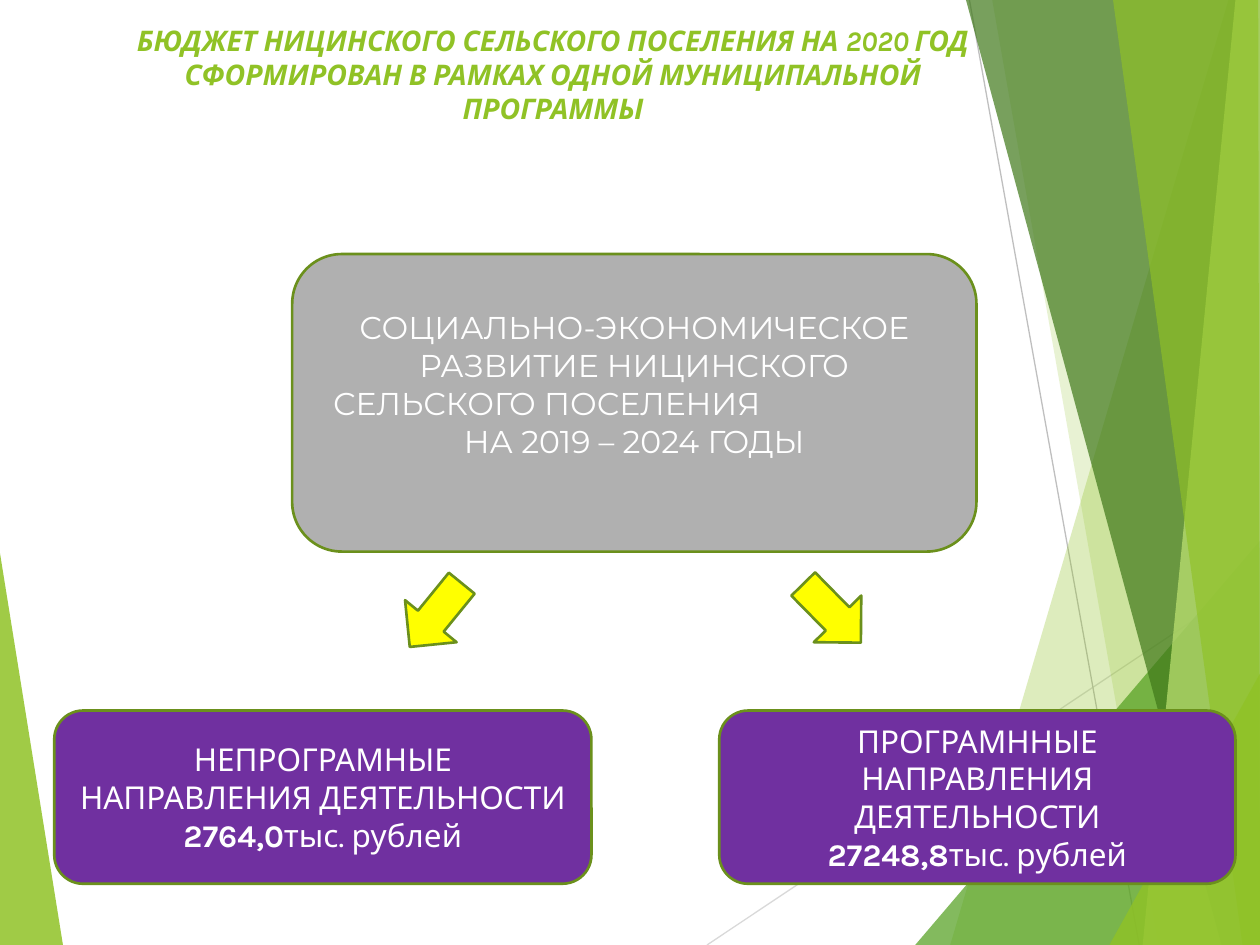
from dataclasses import dataclass

from lxml.etree import SubElement
from pptx import Presentation
from pptx.dml.color import RGBColor
from pptx.enum.shapes import MSO_CONNECTOR as Connector, MSO_SHAPE as Shape
from pptx.enum.text import MSO_ANCHOR as Anchor, PP_ALIGN as Align
from pptx.oxml.ns import qn
from pptx.util import Pt


@dataclass(frozen=True)
class Theme:
    lime: str = "90C226"
    green: str = "54A021"
    forest: str = "3F7819"
    pale_lime: str = "C0E474"
    outline: str = "6B901C"
    light_rule: str = "D9D9D9"
    dark_rule: str = "BFBFBF"
    programme: str = "B0B0B0"
    direction: str = "7030A0"
    arrow: str = "FFFF00"
    white: str = "FFFFFF"
    title_size: float = 16.2
    body_size: float = 18
    text_face: str = "Karla"
    programme_face: str = "Montserrat"
    border: float = 1.5
    rule: float = 0.75


class BudgetSlide:
    def __init__(self, slide, theme):
        self.shapes = slide.shapes
        self.theme = theme

    def facet(self, corners, color, opacity):
        """Draw a translucent polygon of the background; opacity is in percent."""
        start, *others = [(Pt(x), Pt(y)) for x, y in corners]
        builder = self.shapes.build_freeform(*start)
        builder.add_line_segments(others)
        polygon = builder.convert_to_shape()
        polygon.shadow.inherit = False
        polygon.line.fill.background()
        polygon.fill.solid()
        polygon.fill.fore_color.rgb = RGBColor.from_string(color)
        tint = polygon.fill._xPr.find(".//" + qn("a:srgbClr"))
        SubElement(tint, qn("a:alpha"), val=str(opacity * 1000))

    def rule(self, x1, y1, x2, y2, color):
        line = self.shapes.add_connector(
            Connector.STRAIGHT, Pt(x1), Pt(y1), Pt(x2), Pt(y2))
        line.line.color.rgb = RGBColor.from_string(color)
        line.line.width = Pt(self.theme.rule)
        SubElement(line._element.spPr, qn("a:effectLst"))

    def title(self, left, top, width, height, wording):
        frame = self.shapes.add_textbox(
            Pt(left), Pt(top), Pt(width), Pt(height)).text_frame
        frame.word_wrap = True
        paragraph = frame.paragraphs[0]
        paragraph.add_run().text = wording
        self._style(paragraph, self.theme.text_face, self.theme.lime,
                    self.theme.title_size)
        paragraph.font.bold = paragraph.font.italic = True

    def box(self, left, top, width, height, fill, face, lines):
        """Add a rounded box; each line is a list of (wording, bold) runs."""
        panel = self._outlined(
            Shape.ROUNDED_RECTANGLE, left, top, width, height, fill)
        frame = panel.text_frame
        frame.word_wrap = True
        frame.vertical_anchor = Anchor.MIDDLE
        for index, runs in enumerate(lines):
            paragraph = frame.add_paragraph() if index else frame.paragraphs[0]
            for wording, bold in runs:
                run = paragraph.add_run()
                run.text = wording
                if bold:
                    run.font.bold = True
            self._style(paragraph, face, self.theme.white, self.theme.body_size)
        return frame

    def arrow(self, left, top, rotation):
        pointer = self._outlined(
            Shape.DOWN_ARROW, left, top, 38, 47, self.theme.arrow)
        pointer.rotation = rotation

    def _outlined(self, kind, left, top, width, height, fill):
        shape = self.shapes.add_shape(
            kind, Pt(left), Pt(top), Pt(width), Pt(height))
        shape.shadow.inherit = False
        shape.fill.solid()
        shape.fill.fore_color.rgb = RGBColor.from_string(fill)
        shape.line.color.rgb = RGBColor.from_string(self.theme.outline)
        shape.line.width = Pt(self.theme.border)
        return shape

    def _style(self, paragraph, face, color, size):
        paragraph.alignment = Align.CENTER
        paragraph.font.name = face
        paragraph.font.size = Pt(size)
        paragraph.font.color.rgb = RGBColor.from_string(color)


def draw_background(page, theme):
    page.facet([(0, 316), (36, 540), (0, 540)], theme.lime, 85)
    page.rule(404, 540, 720, 329, theme.light_rule)
    page.rule(554, 0, 651, 540, theme.dark_rule)
    right_facets = [
        ([(702, 0), (543, 540), (720, 540), (720, 0)], theme.lime, 30),
        ([(567, 0), (662, 540), (720, 540), (720, 0)], theme.lime, 20),
        ([(523, 540), (720, 309), (720, 540)], theme.green, 72),
        ([(552, 0), (698, 540), (720, 540), (720, 0)], theme.forest, 70),
        ([(706, 0), (653, 540), (720, 540), (720, 0)], theme.pale_lime, 70),
        ([(636, 0), (710, 540), (720, 540), (719, 0)], theme.lime, 65),
        ([(634, 540), (720, 385), (720, 540)], theme.lime, 80),
    ]
    for corners, color, opacity in right_facets:
        page.facet(corners, color, opacity)


def draw_programme(page, theme):
    frame = page.box(167, 145.2, 391, 170, theme.programme, theme.programme_face, [
        [("СОЦИАЛЬНО-ЭКОНОМИЧЕСКОЕ РАЗВИТИЕ НИЦИНСКОГО", False)],
        [("СЕЛЬСКОГО ПОСЕЛЕНИЯ", False)],
        [("НА 2019 – 2024 ГОДЫ", False)],
    ])
    frame.margin_bottom = Pt(25)
    settlement = frame.paragraphs[1]
    settlement.alignment = Align.LEFT
    settlement._p.get_or_add_pPr().set("marL", str(Pt(8)))


def draw_directions(page, theme):
    directions = [
        (31, 307, "НЕПРОГРАМНЫЕ НАПРАВЛЕНИЯ ДЕЯТЕЛЬНОСТИ", "2764,0"),
        (411, 295, "ПРОГРАМННЫЕ НАПРАВЛЕНИЯ ДЕЯТЕЛЬНОСТИ", "27248,8"),
    ]
    for left, width, heading, amount in directions:
        page.box(left, 406, width, 99, theme.direction, theme.text_face, [
            [(heading, False)],
            [(amount, True), ("тыс. рублей", False)],
        ])
    page.arrow(230, 328, 39.2)
    page.arrow(456.5, 327, 315.5)


def main():
    deck = Presentation()
    deck.slide_width, deck.slide_height = Pt(720), Pt(540)
    theme = Theme()
    page = BudgetSlide(deck.slides.add_slide(deck.slide_layouts[6]), theme)
    draw_background(page, theme)
    page.title(60, 9.4, 512, 104,
               "БЮДЖЕТ НИЦИНСКОГО СЕЛЬСКОГО ПОСЕЛЕНИЯ НА 2020 ГОД "
               "СФОРМИРОВАН В РАМКАХ ОДНОЙ МУНИЦИПАЛЬНОЙ ПРОГРАММЫ")
    draw_programme(page, theme)
    draw_directions(page, theme)
    deck.save("out.pptx")


if __name__ == "__main__":
    main()
